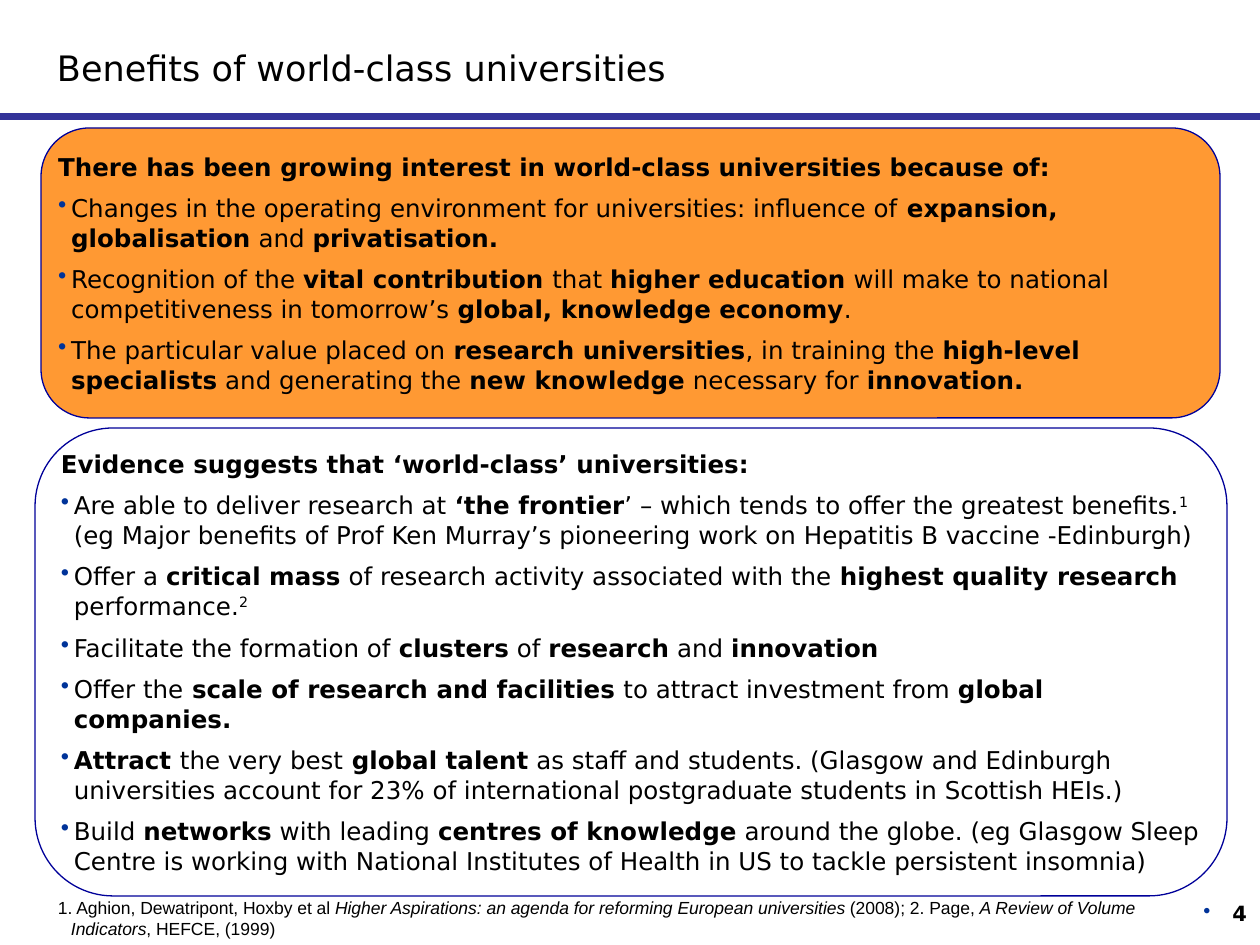
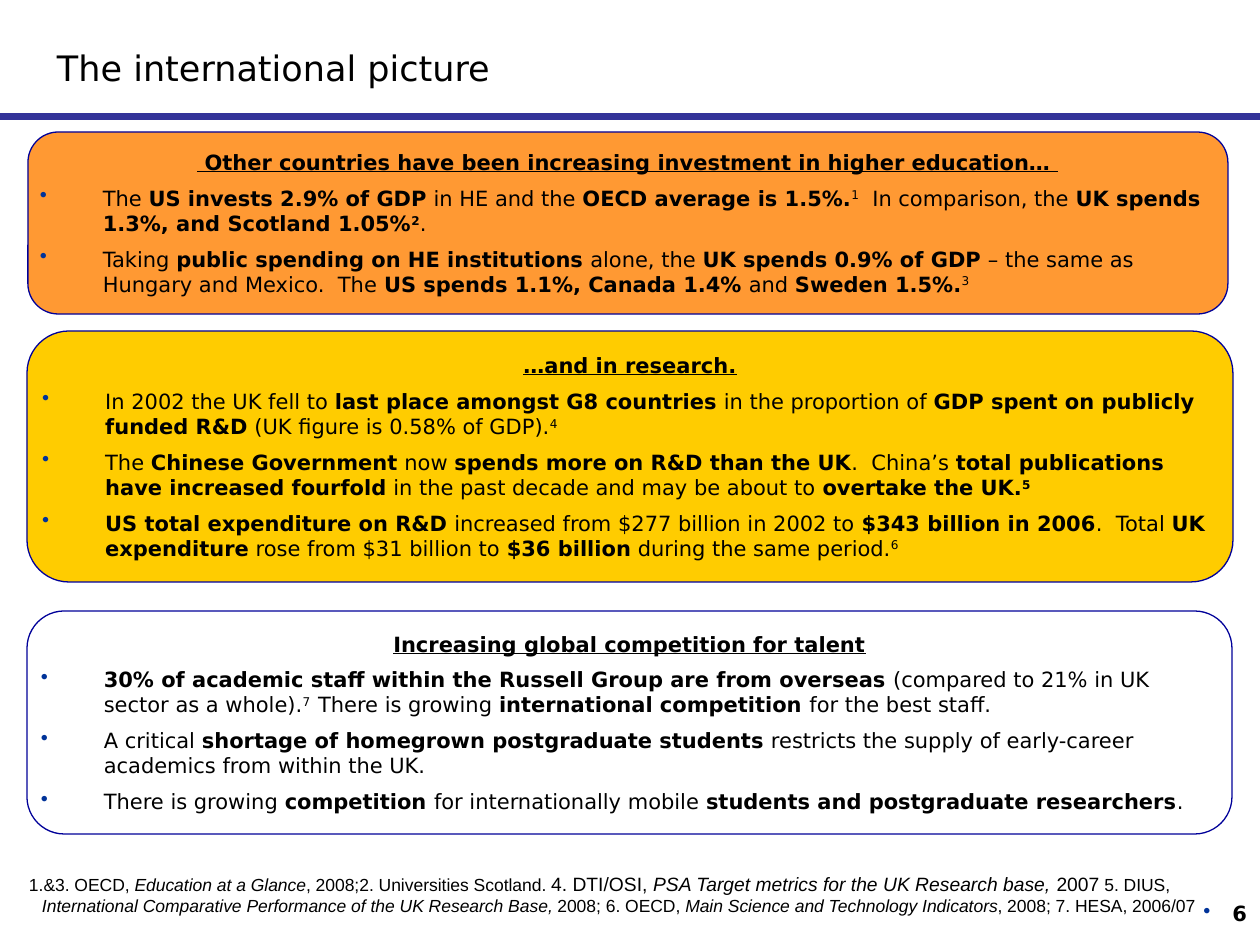
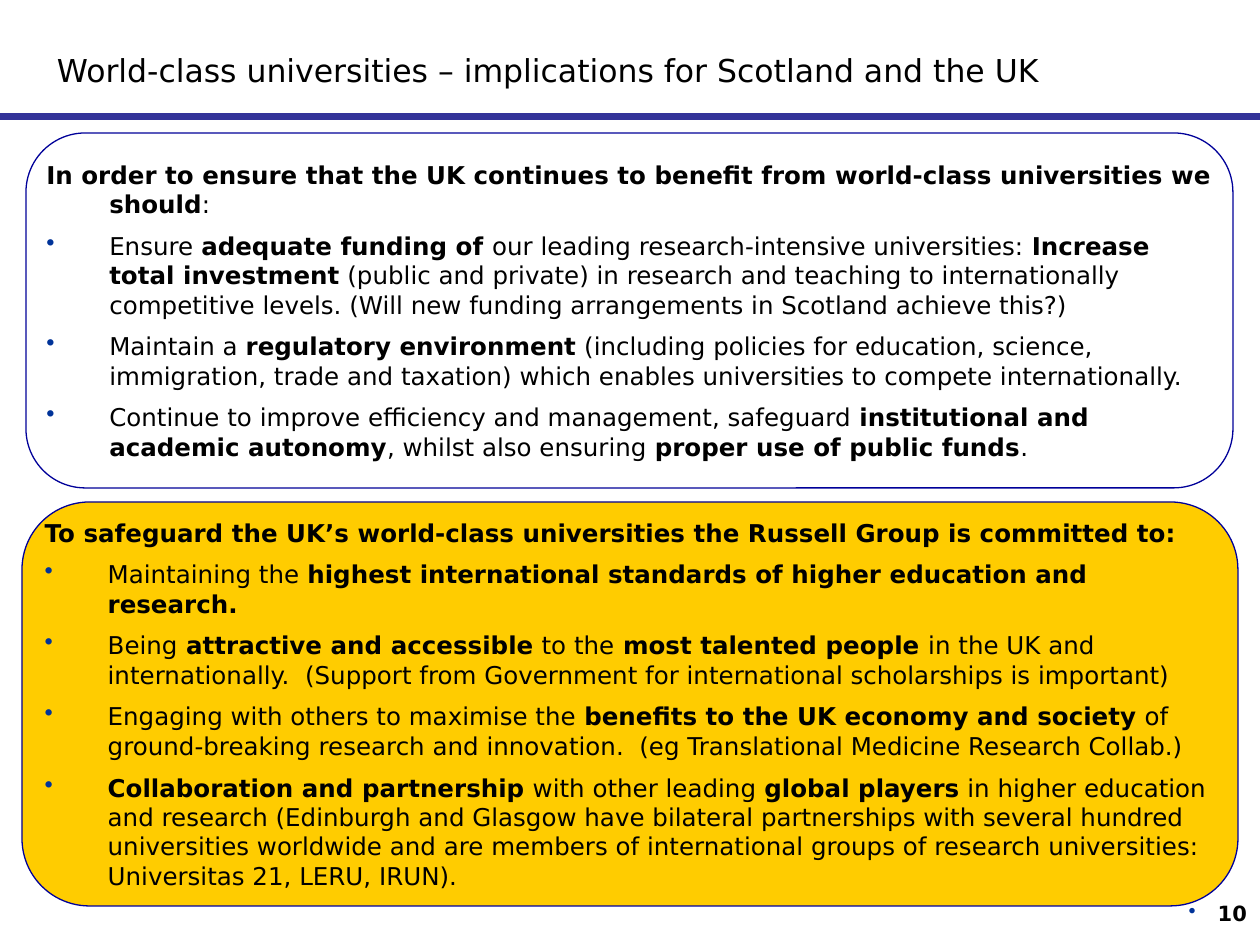
from dataclasses import dataclass

from lxml.etree import SubElement
from pptx import Presentation
from pptx.dml.color import RGBColor as RGB
from pptx.enum.shapes import MSO_CONNECTOR as CONNECTOR, MSO_SHAPE as SHAPE
from pptx.enum.text import MSO_ANCHOR as ANCHOR, MSO_AUTO_SIZE as AUTO, PP_ALIGN as ALIGN
from pptx.oxml.ns import qn
from pptx.util import Inches, Pt

SLIDE_W, SLIDE_H = 1260, 945
SCALE = Inches(10) / SLIDE_W
MARKS = {"*": "bold", "_": "italic", "~": "underline", "^": "raised", "|": "large"}


def px(n):
    """Turn pixels into EMU."""
    return round(n * SCALE)


@dataclass(frozen=True)
class Theme:
    """Colours, fonts and type sizes of the deck."""
    ink: RGB = RGB.from_string("000000")
    rule: RGB = RGB.from_string("333399")
    outline: RGB = RGB.from_string("000099")
    orange: RGB = RGB.from_string("FF9933")
    yellow: RGB = RGB.from_string("FFCC00")
    bullet: str = "003399"
    font: str = "DejaVu Sans"
    note_font: str = "Arial"
    title: int = 20
    long_title: int = 18
    body: int = 14
    small: int = 12
    note: int = 10
    large_note: int = 11


def split_runs(text):
    """Yield each stretch of marked-up text with the set of styles on it."""
    styles, part = set(), ""
    for ch in text:
        if ch not in MARKS:
            part += ch
            continue
        if part:
            yield part, set(styles)
        styles ^= {MARKS[ch]}
        part = ""
    if part:
        yield part, styles


class Deck:
    """Holds the theme and the current slide, and draws each kind of element."""

    def __init__(self, theme):
        """Start an empty deck."""
        self.theme = theme
        self.prs = Presentation()
        self.prs.slide_width, self.prs.slide_height = px(SLIDE_W), px(SLIDE_H)

    def slide(self, title, number, size=None):
        """Add a slide with its title, rule and number."""
        self.s = self.prs.slides.add_slide(self.prs.slide_layouts[5])
        self.rule()
        self.title(title, size or self.theme.title)
        self.number(number)

    def rule(self):
        """Draw the rule under the title."""
        line = self.s.shapes.add_connector(CONNECTOR.STRAIGHT, 0, px(117), px(SLIDE_W), px(117))
        line.line.color.rgb = self.theme.rule
        line.line.width = Pt(4)
        SubElement(line._element.spPr, qn("a:effectLst"))

    def title(self, text, size):
        """Place and fill the title placeholder."""
        sp = self.s.shapes.title
        box = {"left": 44, "top": 23, "width": 1024, "height": 72}
        for name, value in box.items():
            setattr(sp, name, px(value))
        self.frame(sp, ANCHOR.BOTTOM, 13)
        self.paragraph(sp.text_frame.paragraphs[0], text, size)

    def number(self, number):
        """Put the bulleted slide number in the bottom corner."""
        sp = self.s.shapes.add_textbox(px(998), px(882), px(262), px(63))
        self.frame(sp, ANCHOR.MIDDLE, 13)
        self.paragraph(sp.text_frame.paragraphs[0], f"*{number}*", self.theme.small,
                       indent=29, bullet=True, align=ALIGN.RIGHT)

    def panel(self, box, heading, points, fill=None, size=None, indent=63, align=ALIGN.LEFT):
        """Draw a rounded panel with a heading and bullet points."""
        sp = self.s.shapes.add_shape(SHAPE.ROUNDED_RECTANGLE, *map(px, box))
        sp.shadow.inherit = False
        sp.adjustments[0] = 0.167
        sp.line.color.rgb = self.theme.outline
        sp.line.width = Pt(0.75)
        if fill:
            sp.fill.solid()
            sp.fill.fore_color.rgb = fill
        else:
            sp.fill.background()
        tf = self.frame(sp, ANCHOR.MIDDLE, 3)
        size = size or self.theme.body
        self.paragraph(tf.paragraphs[0], heading, size, indent=indent, align=align)
        for point in points:
            p = tf.add_paragraph()
            p.space_before = Pt(size / 2)
            self.paragraph(p, point, size, indent=indent, bullet=True)

    def footnote(self, box, text):
        """Write the sources at the foot of the slide."""
        sp = self.s.shapes.add_textbox(*map(px, box))
        tf = self.frame(sp, ANCHOR.TOP, 3)
        self.paragraph(tf.paragraphs[0], text, self.theme.note, indent=13, font=self.theme.note_font)

    def frame(self, sp, anchor, side):
        """Set wrapping, anchor and margins of a text frame."""
        tf = sp.text_frame
        form = {"word_wrap": True, "auto_size": AUTO.NONE, "vertical_anchor": anchor,
                "margin_left": px(side), "margin_right": px(side),
                "margin_top": px(6), "margin_bottom": px(6)}
        for name, value in form.items():
            setattr(tf, name, value)
        return tf

    def paragraph(self, p, text, size, indent=0, bullet=False, align=ALIGN.LEFT, font=None):
        """Fill a paragraph with styled runs and a hanging indent."""
        p.alignment = align
        pPr = p._p.get_or_add_pPr()
        pPr.set("marL", str(px(indent)))
        pPr.set("indent", str(-px(indent)))
        if bullet:
            colour = SubElement(pPr, qn("a:buClr"))
            SubElement(colour, qn("a:srgbClr")).set("val", self.theme.bullet)
            SubElement(pPr, qn("a:buChar")).set("char", "•")
        for part, styles in split_runs(text):
            r = p.add_run()
            r.text = part
            r.font.color.rgb = self.theme.ink
            form = {"name": font or self.theme.font,
                    "size": Pt(self.theme.large_note if "large" in styles else size)}
            form |= {name: name in styles for name in ("bold", "italic", "underline")}
            for name, value in form.items():
                setattr(r.font, name, value)
            if "raised" in styles:
                r._r.get_or_add_rPr().set("baseline", "30000")


def benefits(deck):
    """Build the slide on the benefits of world-class universities."""
    deck.slide("Benefits of world-class universities", 4)
    deck.panel((41, 128, 1179, 290),
               "*There has been growing interest in world-class universities because of:*", [
        "Changes in the operating environment for universities: influence of* expansion, "
        "globalisation* and *privatisation.*",
        "Recognition of the *vital contribution *that *higher education* will make to national "
        "competitiveness in tomorrow’s *global, knowledge economy*.",
        "The particular value placed on *research universities*, in training the *high-level "
        "specialists* and generating the *new knowledge* necessary for *innovation.*",
    ], fill=deck.theme.orange, indent=13)
    deck.panel((35, 428, 1192, 468), "*Evidence suggests that ‘world-class’ universities:*", [
        "Are able to deliver research at *‘the frontier*’ – which tends to offer the greatest "
        "benefits.^1 ^(eg Major benefits of Prof Ken Murray’s pioneering work on Hepatitis B "
        "vaccine -Edinburgh)",
        "Offer a *critical mass* of research activity associated with the *highest quality "
        "research* performance.^2^",
        "Facilitate the formation of *clusters* of *research* and *innovation*",
        "Offer the* scale of research and facilities* to attract investment from *global "
        "companies.*",
        "*Attract *the very best* global talent* as staff and students. (Glasgow and Edinburgh "
        "universities account for 23% of international postgraduate students in Scottish HEIs.)",
        "Build *networks* with leading *centres of knowledge* around the globe. (eg Glasgow "
        "Sleep Centre is working with National Institutes of Health in US to tackle persistent "
        "insomnia)",
    ], indent=13)
    deck.footnote((55, 891, 1145, 54),
                  "1. Aghion, Dewatripont, Hoxby et al _Higher Aspirations: an agenda for reforming "
                  "European universities_ (2008); 2. Page, _A Review of Volume Indicators_, HEFCE, "
                  "(1999)")


def international(deck):
    """Build the slide on the international picture."""
    deck.slide("The international picture", 6)
    style = {"size": deck.theme.small, "align": ALIGN.CENTER}
    deck.panel((28, 132, 1200, 182),
               "*~ Other countries have been increasing investment in higher education… ~*", [
        "The *US invests 2.9% of GDP* in HE and the *OECD average is 1.5%.*^1^  In comparison, "
        "the *UK spends 1.3%, and Scotland 1.05%^2^*.",
        "Taking *public spending on HE institutions* alone, the *UK spends 0.9% of GDP* – the "
        "same as Hungary and Mexico.  The *US spends 1.1%, Canada 1.4%* and *Sweden 1.5%.*^3^",
    ], fill=deck.theme.orange, **style)
    deck.panel((27, 331, 1206, 251), "*~…and in research.~*", [
        "In 2002 the UK fell to *last place amongst G8 countries* in the proportion of *GDP "
        "spent on publicly funded R&D* (UK figure is 0.58% of GDP).^4^",
        "The *Chinese Government* now *spends more on R&D than the UK*.  China’s *total "
        "publications have increased fourfold* in the past decade and may be about to "
        "*overtake the UK.^5^*",
        "*US total expenditure on R&D* increased from $277 billion in 2002 to *$343 billion in "
        "2006*.  Total *UK expenditure* rose from $31 billion to *$36 billion* during the same "
        "period.^6^",
    ], fill=deck.theme.yellow, **style)
    deck.panel((27, 611, 1205, 223), "*~Increasing global competition for talent~*", [
        "*30% of academic staff within the Russell Group are from overseas* (compared to 21% in "
        "UK sector as a whole).^7  ^There is growing *international competition *for the best "
        "staff.",
        "A critical *shortage of homegrown postgraduate students* restricts the supply of "
        "early-career academics from within the UK.",
        "There is growing *competition *for internationally mobile *students and postgraduate "
        "researchers*.",
    ], **style)
    deck.footnote((26, 866, 1191, 57),
                  "1.&3. OECD, _Education at a Glance_, 2008;2. Universities Scotland. |4. DTI/OSI,"
                  "_ PSA Target metrics for the UK Research base, _2007| 5. DIUS, _International "
                  "Comparative Performance of the UK Research Base,_ 2008; 6. OECD, _Main Science "
                  "and Technology Indicators_, 2008; 7. HESA, 2006/07")


def implications(deck):
    """Build the slide on the implications for Scotland and the UK."""
    deck.slide("World-class universities – implications for Scotland and the UK", 10,
               deck.theme.long_title)
    deck.panel((26, 133, 1207, 355),
               "*In order to ensure that the UK continues to benefit from world-class "
               "universities we should*:", [
        "Ensure *adequate funding of *our leading research-intensive universities: *Increase "
        "total investment* (public and private) in research and teaching to internationally "
        "competitive levels. (Will new funding arrangements in Scotland achieve this?)",
        "Maintain a *regulatory environment* (including policies for education, science, "
        "immigration, trade and taxation) which enables universities to compete "
        "internationally.",
        "Continue to improve efficiency and management, safeguard *institutional and academic "
        "autonomy*, whilst also ensuring *proper use of public funds*.",
    ])
    deck.panel((22, 502, 1216, 404),
               "*To safeguard the UK’s world-class universities the Russell Group is "
               "committed to:*", [
        "Maintaining the *highest international standards of higher education and research.*",
        "Being* attractive and accessible* to the* most talented people *in the UK and "
        "internationally.  (Support from Government for international scholarships is "
        "important)",
        "Engaging with others to maximise the *benefits to the UK economy and society* of "
        "ground-breaking research and innovation.  (eg Translational Medicine Research "
        "Collab.)",
        "*Collaboration and partnership* with other leading *global players* in higher "
        "education and research (Edinburgh and Glasgow have bilateral partnerships with "
        "several hundred universities worldwide and are members of international groups of "
        "research universities:  Universitas 21, LERU, IRUN).",
    ], fill=deck.theme.yellow)


def main():
    """Build the slides and save the deck."""
    deck = Deck(Theme())
    for build in (benefits, international, implications):
        build(deck)
    deck.prs.save("out.pptx")


if __name__ == "__main__":
    main()
